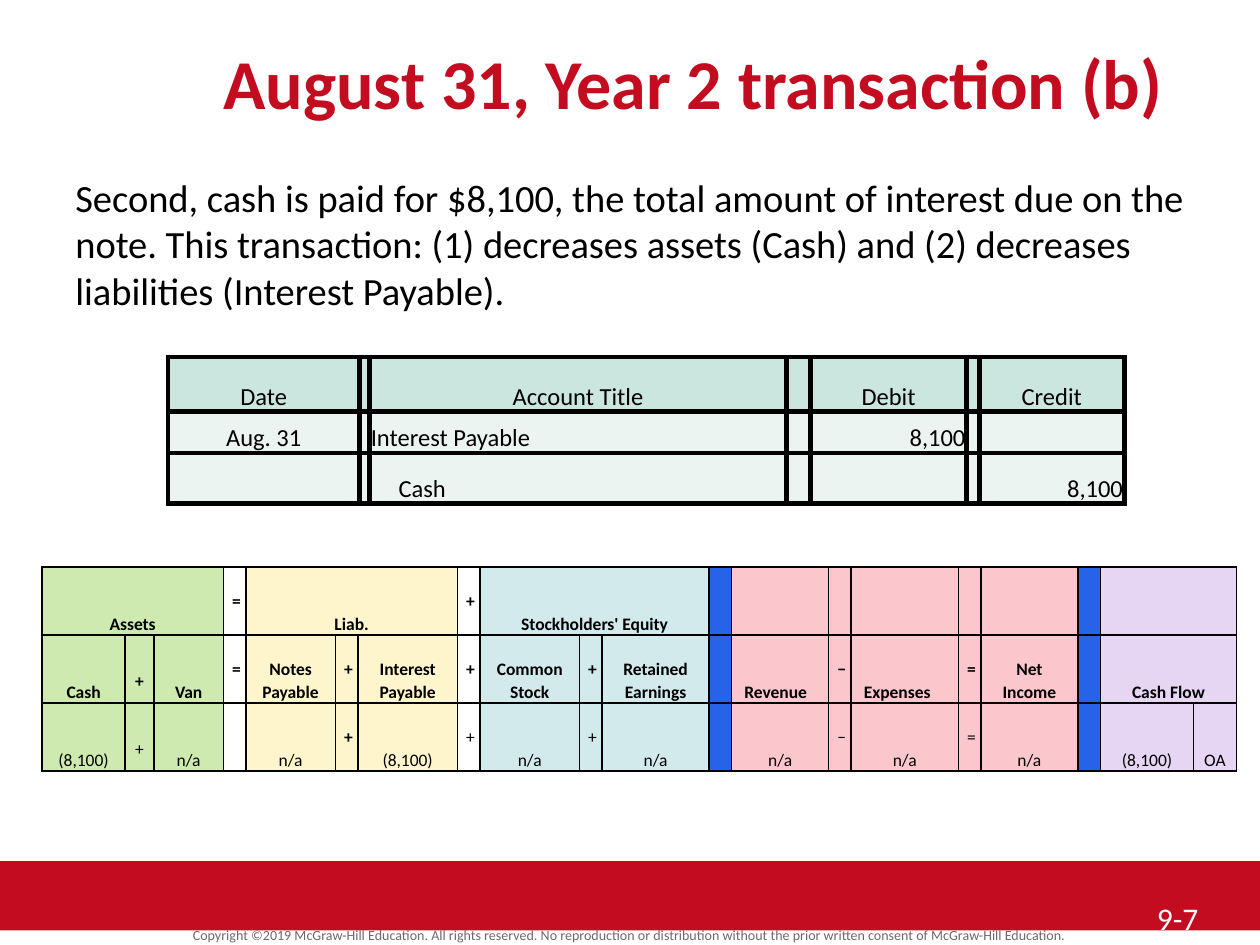
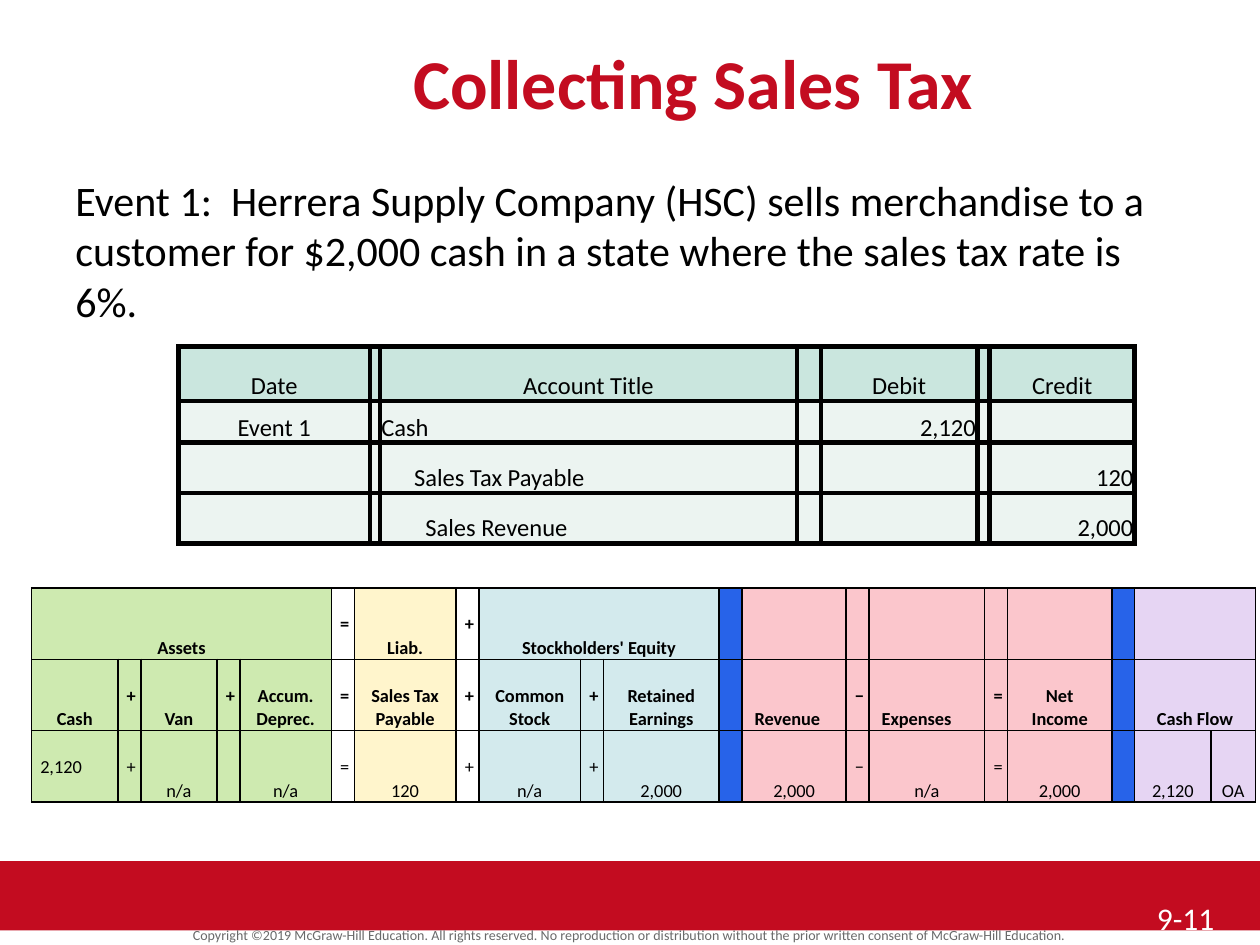
from dataclasses import dataclass
from itertools import groupby

from lxml import etree
from pptx import Presentation
from pptx import util as u
from pptx.dml.color import RGBColor
from pptx.enum import shapes, text
from pptx.oxml import ns

SLIDE_WIDTH, SLIDE_HEIGHT = u.Inches(10), u.Inches(7.5)
COLUMNS, ROWS = 120, 90
FONT = "Calibri"
RED = RGBColor(0xC3, 0x0C, 0x20)
GREY = RGBColor(0x6A, 0x6A, 0x6A)
BLACK = RGBColor(0x00, 0x00, 0x00)
WHITE = RGBColor(0xFF, 0xFF, 0xFF)
HEADER_GREEN = RGBColor(0xCA, 0xE6, 0xDE)
ENTRY_GREEN = RGBColor(0xEC, 0xF4, 0xF1)
GROUP_FILLS = {
    "A": RGBColor(0xCE, 0xEA, 0xB0),
    "L": RGBColor(0xFF, 0xF5, 0xCC),
    "E": RGBColor(0xD3, 0xEA, 0xED),
    "|": RGBColor(0x27, 0x63, 0xE9),
    "R": RGBColor(0xFB, 0xC6, 0xCC),
    "C": RGBColor(0xE6, 0xD5, 0xF3),
}
GROUP_TITLES = {"A": "Assets", "L": "Liab.", "E": "Stockholders' Equity", "C": ""}
OPERATORS = ("+", "−", "=")
LEFT, CENTER, RIGHT = text.PP_ALIGN.LEFT, text.PP_ALIGN.CENTER, text.PP_ALIGN.RIGHT
TOP, MIDDLE, BOTTOM = (text.MSO_ANCHOR.TOP, text.MSO_ANCHOR.MIDDLE,
                       text.MSO_ANCHOR.BOTTOM)
COPYRIGHT = ("Copyright ©2019 McGraw-Hill Education. All rights reserved. No reproduction "
             "or distribution without the prior written consent of McGraw-Hill Education.")
JOURNAL_WIDTHS = (1.52, 0.08, 3.31, 0.19, 1.24, 0.1, 1.15)
JOURNAL_HEADINGS = ("Date", "", "Account Title", "", "Debit", "", "Credit")
JOURNAL_ALIGNS = (CENTER, LEFT, LEFT, LEFT, RIGHT, LEFT, RIGHT)
JOURNAL_HEIGHTS = (5.2, 3.96, 4.8, 4.8)


@dataclass(frozen=True)
class Area:
    column: float
    row: float
    width: float
    height: float

    def lengths(self) -> tuple:
        return (int(SLIDE_WIDTH * self.column / COLUMNS),
                int(SLIDE_HEIGHT * self.row / ROWS),
                int(SLIDE_WIDTH * self.width / COLUMNS),
                int(SLIDE_HEIGHT * self.height / ROWS))


@dataclass(frozen=True)
class Style:
    size: float
    color: RGBColor = BLACK
    bold: bool = False
    align: object = LEFT
    anchor: object = TOP
    spacing: float = 1.0


@dataclass(frozen=True)
class Entry:
    account: str
    date: str = ""
    debit: str = ""
    credit: str = ""
    indent: float = 0

    def values(self) -> tuple:
        return self.date, "", self.account, "", self.debit, "", self.credit


@dataclass(frozen=True)
class Journal:
    column: float
    row: float
    entries: tuple


@dataclass(frozen=True)
class Equation:
    column: float
    row: float
    width: float
    row_height: float
    size: float
    groups: str
    widths: tuple
    headings: str
    amounts: str
    bold_columns: tuple = ()
    raised_columns: tuple = ()


@dataclass(frozen=True)
class Transaction:
    title: str
    body: str
    body_size: float
    number: str
    journal: Journal
    equation: Equation


TITLE = Style(40, RED, True, CENTER)
FOOTER = Style(8, GREY, align=CENTER, anchor=MIDDLE, spacing=0.8)
NUMBER = Style(18, WHITE)

TRANSACTIONS = (
    Transaction(
        "August 31, Year 2 transaction (b)",
        "Second, cash is paid for $8,100, the total amount of interest due on the note. "
        "This transaction: (1) decreases assets (Cash) and (2) decreases liabilities "
        "(Interest Payable).",
        22, "9-7",
        Journal(16, 34, (
            Entry("Interest Payable", "Aug. 31", debit="8,100"),
            Entry("Cash", credit="8,100", indent=0.22))),
        Equation(
            4, 54, 113.8, 6.48, 10, "AAA LLL EEE|RRRRR|CC",
            (0.66, 0.23, 0.55, 0.18, 0.71, 0.18, 0.79, 0.18, 0.79, 0.18,
             0.85, 0.18, 0.77, 0.18, 0.85, 0.18, 0.77, 0.18, 0.74, 0.34),
            "Cash; +;Van;=;Notes Payable;+;Interest Payable;+;Common Stock;+;"
            "Retained Earnings;;Revenue;−;Expenses;=;Net Income;;Cash Flow;",
            "(8,100); +;n/a;;n/a;+;(8,100);+;n/a;+;n/a;;n/a;−;n/a;=;n/a;;(8,100);OA",
            bold_columns=(5,))),
    Transaction(
        "Collecting Sales Tax",
        "Event 1:  Herrera Supply Company (HSC) sells merchandise to a customer for "
        "$2,000 cash in a state where the sales tax rate is 6%.",
        24, "9-11",
        Journal(17, 33, (
            Entry("Cash", "Event 1", debit="2,120"),
            Entry("Sales Tax Payable", credit="120", indent=0.26),
            Entry("Sales Revenue", credit="2,000", indent=0.35))),
        Equation(
            3, 56, 116.6, 6.8, 10.5, "AAAAA L EEE|RRRRR|CC",
            (0.68, 0.18, 0.6, 0.18, 0.72, 0.18, 0.8, 0.18, 0.8, 0.18,
             0.91, 0.18, 0.82, 0.18, 0.91, 0.18, 0.82, 0.18, 0.6, 0.35),
            "Cash;+;Van;+;Accum. Deprec.;=;Sales Tax Payable;+;Common Stock;+;"
            "Retained Earnings;;Revenue;−;Expenses;=;Net Income;;Cash Flow;",
            "2,120;+;n/a;;n/a;=;120;+;n/a;+;2,000;;2,000;−;n/a;=;2,000;;2,120;OA",
            raised_columns=(0,))),
)


def write(para, words: str, style: Style) -> None:
    para.text = words
    para.alignment = style.align
    para.line_spacing = style.spacing
    font = para.font
    font.name, font.size, font.bold = FONT, u.Pt(style.size), style.bold
    font.color.rgb = style.color


def add_text(page, area: Area, words: str, style: Style) -> None:
    frame = page.shapes.add_textbox(*area.lengths()).text_frame
    frame.word_wrap = True
    frame.vertical_anchor = style.anchor
    if style.anchor == MIDDLE:
        frame.margin_top = frame.margin_bottom = 0
    write(frame.paragraphs[0], words, style)


def add_band(page) -> None:
    band = page.shapes.add_shape(shapes.MSO_SHAPE.RECTANGLE,
                                 *Area(0, 82, COLUMNS, 6.6).lengths())
    band.shadow.inherit = False
    band.fill.solid()
    band.fill.fore_color.rgb = RED
    band.line.fill.background()


def add_grid(page, area: Area, widths: tuple, heights: tuple):
    table = page.shapes.add_table(len(heights), len(widths), *area.lengths()).table
    for column, width in zip(table.columns, widths):
        column.width = int(area.lengths()[2] * width / sum(widths))
    for row, height in zip(table.rows, heights):
        row.height = int(SLIDE_HEIGHT * height / ROWS)
    return table


def set_borders(cell, points: float) -> None:
    properties = cell._tc.get_or_add_tcPr()
    for index, side in enumerate(("lnL", "lnR", "lnT", "lnB")):
        line = etree.Element(ns.qn(f"a:{side}"), w=str(u.Pt(points)))
        fill = etree.SubElement(line, ns.qn("a:solidFill"))
        etree.SubElement(fill, ns.qn("a:srgbClr"), val=str(BLACK))
        properties.insert(index, line)


def fill_cell(cell, words: str, style: Style, fill, border: float,
              side: float, indent: float = 0) -> None:
    if fill is None:
        cell.fill.background()
    else:
        cell.fill.solid()
        cell.fill.fore_color.rgb = fill
    set_borders(cell, border)
    cell.margin_left, cell.margin_right = u.Inches(side + indent), u.Inches(side)
    cell.margin_top = cell.margin_bottom = 0
    cell.vertical_anchor = style.anchor
    write(cell.text_frame.paragraphs[0], words, style)


def add_journal(page, journal: Journal) -> None:
    heights = JOURNAL_HEIGHTS[:len(journal.entries) + 1]
    area = Area(journal.column, journal.row, 91.08, sum(heights))
    table = add_grid(page, area, JOURNAL_WIDTHS, heights)
    for column, heading in enumerate(JOURNAL_HEADINGS):
        fill_cell(table.cell(0, column), heading,
                  Style(14, align=CENTER, anchor=BOTTOM), HEADER_GREEN, 3, 0.01)
    for row, entry in enumerate(journal.entries, 1):
        for column, value in enumerate(entry.values()):
            style = Style(14, align=JOURNAL_ALIGNS[column], anchor=BOTTOM)
            fill_cell(table.cell(row, column), value, style, ENTRY_GREEN, 3, 0.01,
                      entry.indent if column == 2 else 0)


def group_titles(equation: Equation, headings: list) -> list:
    titles = []
    for key, members in groupby(equation.groups):
        count = len(list(members))
        first = headings[len(titles)] if key == " " else GROUP_TITLES.get(key, "")
        titles += [first] + [""] * (count - 1)
    return titles


def merge_groups(table, groups: str) -> None:
    for key in GROUP_TITLES:
        first, last = groups.index(key), groups.rindex(key)
        if first < last:
            for row in (0, 1) if key == "C" else (0,):
                table.cell(row, first).merge(table.cell(row, last))


def add_equation(page, equation: Equation) -> None:
    headings, amounts = equation.headings.split(";"), equation.amounts.split(";")
    rows = (group_titles(equation, headings), headings, amounts)
    heights = (equation.row_height,) * len(rows)
    area = Area(equation.column, equation.row, equation.width, sum(heights))
    table = add_grid(page, area, equation.widths, heights)
    for row, values in enumerate(rows):
        for column, value in enumerate(values):
            raised = row == 2 and column in equation.raised_columns
            flush = value in ("Revenue", "Expenses")
            middle = raised or value.strip() in OPERATORS
            style = Style(equation.size,
                          bold=row < 2 or column in equation.bold_columns,
                          align=LEFT if raised or flush else CENTER,
                          anchor=MIDDLE if middle else BOTTOM, spacing=1.07)
            fill_cell(table.cell(row, column), value, style,
                      GROUP_FILLS.get(equation.groups[column]), 1, 0.07,
                      0.03 if flush else 0)
    merge_groups(table, equation.groups)


def add_transaction(deck, item: Transaction) -> None:
    page = deck.slides.add_slide(deck.slide_layouts[6])
    add_band(page)
    add_text(page, Area(0, 88.3, COLUMNS, 1.7), COPYRIGHT, FOOTER)
    add_text(page, Area(12, 3.2, 108, 8), item.title, TITLE)
    add_text(page, Area(6, 16, 108, 62), item.body, Style(item.body_size))
    add_text(page, Area(109, 85, 11, 5), item.number, NUMBER)
    add_equation(page, item.equation)
    add_journal(page, item.journal)


def main() -> None:
    deck = Presentation()
    deck.slide_width, deck.slide_height = SLIDE_WIDTH, SLIDE_HEIGHT
    for item in TRANSACTIONS:
        add_transaction(deck, item)
    deck.save("out.pptx")


if __name__ == "__main__":
    main()
